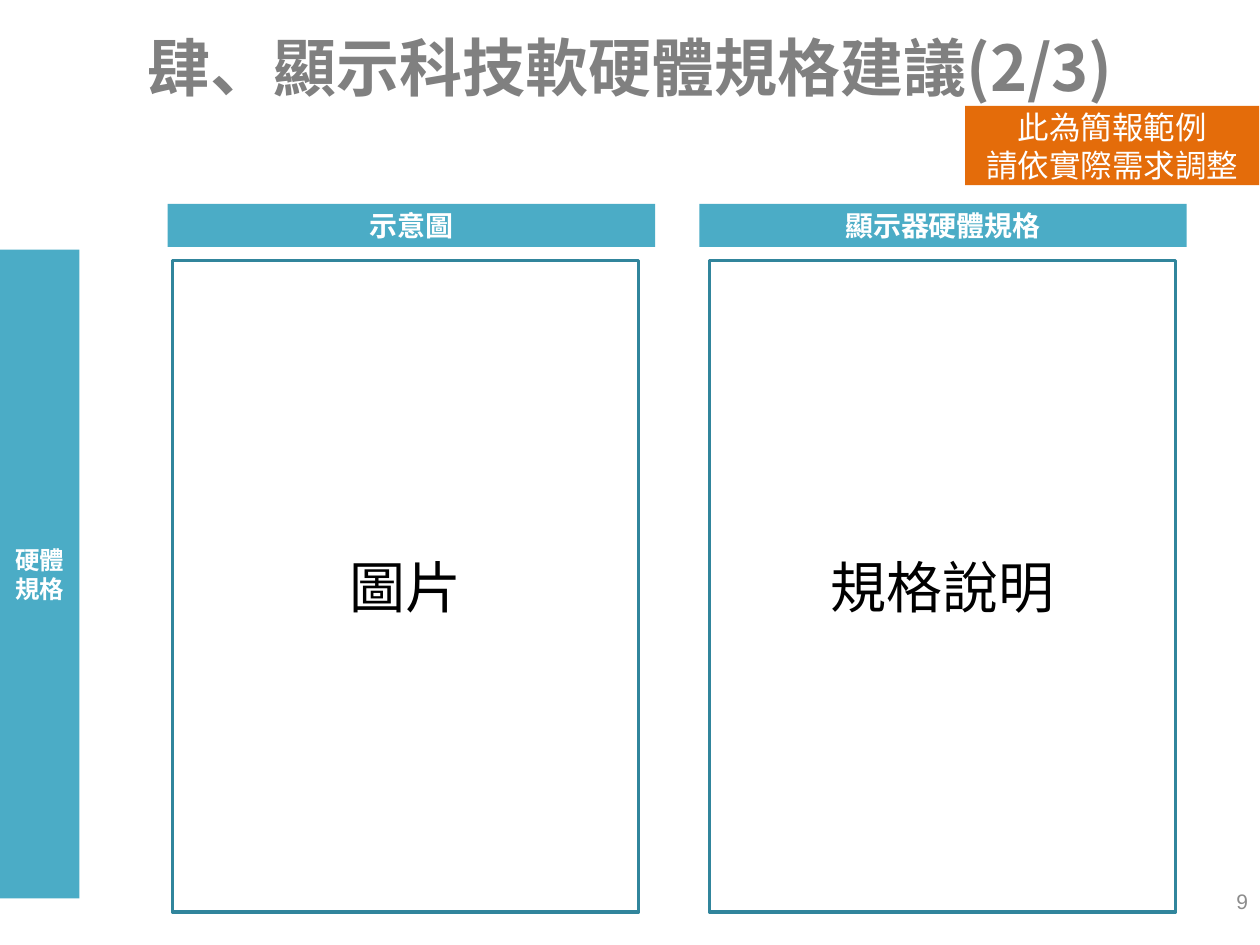
"""Build the display hardware specification slide."""
from dataclasses import dataclass
from typing import Optional

from lxml.etree import SubElement
from pptx import Presentation
from pptx.dml.color import RGBColor
from pptx.enum.shapes import MSO_SHAPE as Preset
from pptx.enum.text import MSO_ANCHOR as Anchor, MSO_AUTO_SIZE as AutoSize, PP_ALIGN as Align
from pptx.oxml.ns import qn
from pptx.slide import Slide
from pptx.text.text import TextFrame
from pptx.util import Pt

WHITE = RGBColor(0xFF, 0xFF, 0xFF)
BLACK = RGBColor(0x00, 0x00, 0x00)
TITLE_GRAY = RGBColor(0x80, 0x80, 0x80)
NUMBER_GRAY = RGBColor(0x8C, 0x8C, 0x8C)
TEAL = RGBColor(0x4B, 0xAC, 0xC6)
DARK_TEAL = RGBColor(0x31, 0x85, 0x9C)
ORANGE = RGBColor(0xE4, 0x6C, 0x0A)
LATIN = "Arial"
CJK = "Noto Sans CJK SC"


@dataclass(frozen=True)
class TextStyle:
    size: float
    color: RGBColor
    bold: bool = False
    font: str = LATIN
    align: Align = Align.CENTER


@dataclass(frozen=True)
class Panel:
    text: str
    left: float
    top: float
    width: float
    height: float
    style: TextStyle
    fill: Optional[RGBColor] = None
    line: Optional[RGBColor] = None


TITLE = TextStyle(36, TITLE_GRAY, True, CJK)
HEADER = TextStyle(16, WHITE, True)
SIDEBAR = TextStyle(14, WHITE, True, CJK)
CONTENT = TextStyle(32, BLACK)
NOTICE = TextStyle(18, WHITE)
NUMBER = TextStyle(12, NUMBER_GRAY, align=Align.RIGHT)


def header(text: str, left: float) -> Panel:
    """Describe a column heading."""
    return Panel(text, left, 116.6, 278.6, 24.5, HEADER, fill=TEAL)


def frame(text: str, left: float) -> Panel:
    """Describe an outlined content area."""
    return Panel(text, left, 149, 266.4, 372.2, CONTENT, line=DARK_TEAL)


PANELS = (
    header("顯示器硬體規格", 399.6),
    Panel("硬體規格", 0, 142.6, 45.4, 370.8, SIDEBAR, fill=TEAL),
    frame("圖片", 98.6),
    frame("規格說明", 405.4),
    header("示意圖", 95.8),
    Panel("此為簡報範例\n請依實際需求調整", 551.5, 60.5, 168, 45.4, NOTICE, fill=ORANGE),
)


def write_text(body: TextFrame, text: str, style: TextStyle) -> None:
    """Fill a text frame with uniformly styled paragraphs."""
    body.text = text
    body.word_wrap = True
    body.auto_size = AutoSize.NONE
    body.vertical_anchor = Anchor.MIDDLE
    for para in body.paragraphs:
        para.alignment = style.align
        para.font.size = Pt(style.size)
        para.font.bold = style.bold
        para.font.color.rgb = style.color
        para.font.name = style.font
        defaults = para._p.find(f"{qn('a:pPr')}/{qn('a:defRPr')}")
        SubElement(defaults, qn("a:ea")).set("typeface", CJK)


def draw_panel(page: Slide, panel: Panel) -> None:
    """Draw a filled or outlined rectangle with its text."""
    box = page.shapes.add_shape(
        Preset.RECTANGLE, Pt(panel.left), Pt(panel.top), Pt(panel.width), Pt(panel.height)
    )
    box.shadow.inherit = False
    if panel.fill is None:
        box.fill.background()
    else:
        box.fill.solid()
        box.fill.fore_color.rgb = panel.fill
    if panel.line is None:
        box.line.fill.background()
    else:
        box.line.color.rgb = panel.line
        box.line.width = Pt(2)
    write_text(box.text_frame, panel.text, panel.style)


def main() -> None:
    """Create and save the deck."""
    deck = Presentation()
    deck.slide_width, deck.slide_height = Pt(720), Pt(540)
    page = deck.slides.add_slide(deck.slide_layouts[5])
    title = page.shapes.title
    title.left, title.top, title.width, title.height = Pt(36), Pt(21.6), Pt(648), Pt(33.1)
    write_text(title.text_frame, "肆、顯示科技軟硬體規格建議(2/3)", TITLE)
    number = page.shapes.add_textbox(Pt(552.2), Pt(500.4), Pt(168), Pt(28.8))
    write_text(number.text_frame, "9", NUMBER)
    for panel in PANELS:
        draw_panel(page, panel)
    deck.save("out.pptx")


if __name__ == "__main__":
    main()
